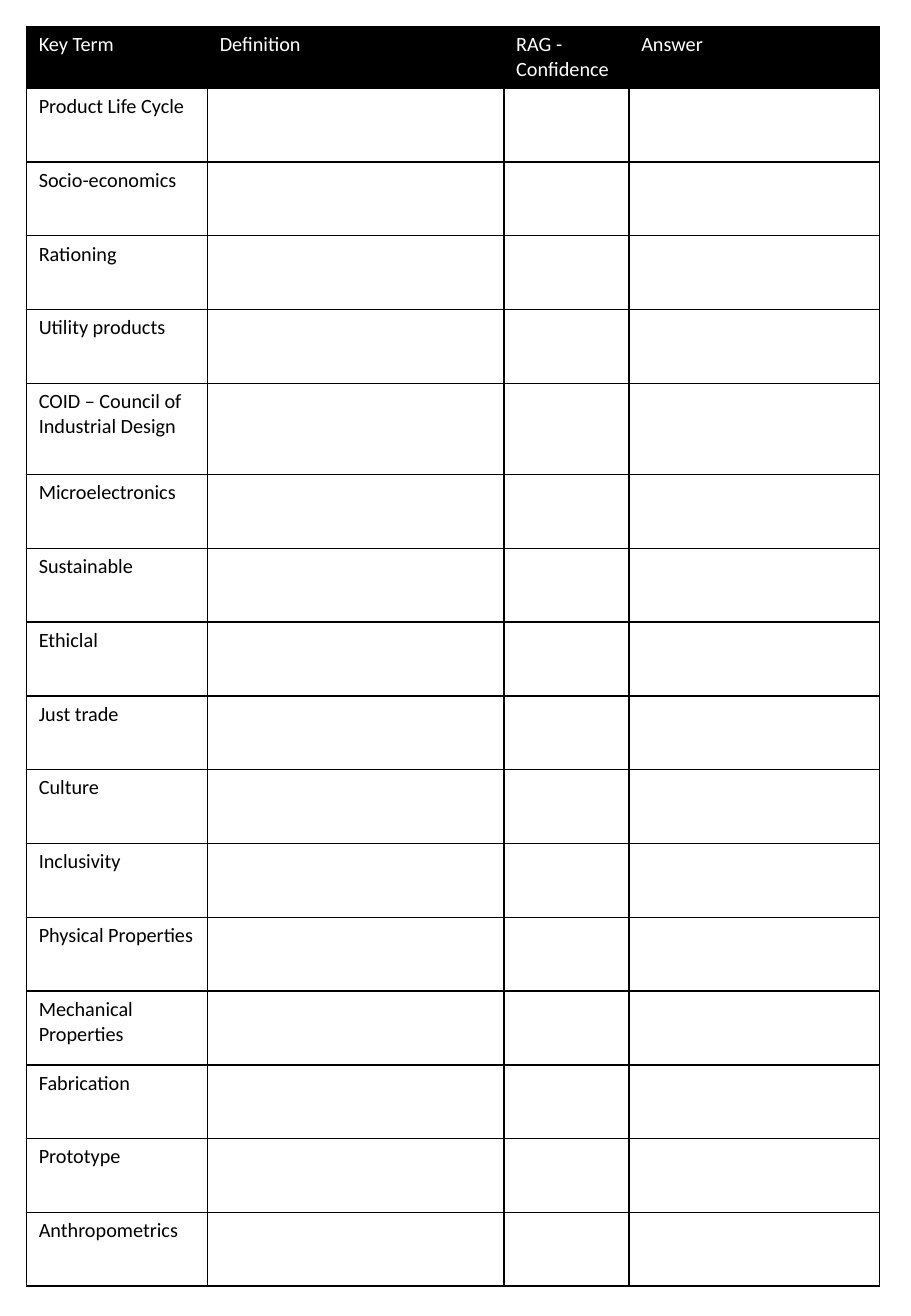
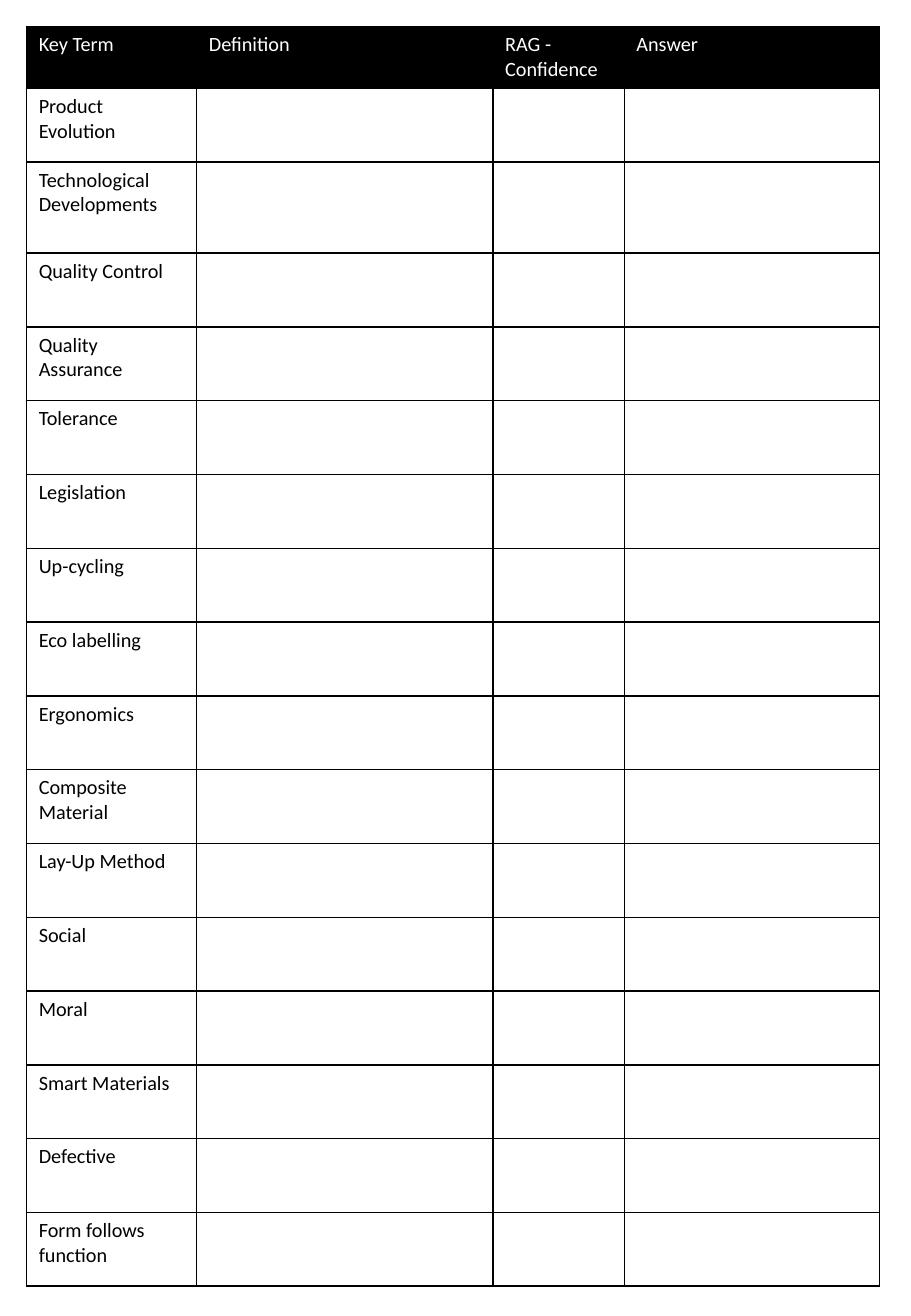
import dataclasses

import lxml.etree
import pptx
import pptx.dml.color
import pptx.oxml.ns
import pptx.util

Pt = pptx.util.Pt
qn = pptx.oxml.ns.qn


@dataclasses.dataclass(frozen=True)
class Theme:
    ink: str = "000000"
    paper: str = "FFFFFF"
    font: str = "Calibri"
    text_size: float = 12
    border: float = 1
    margin: float = 15.8
    header_height: float = 36.5
    row_height: float = 43.75
    tall_row_height: float = 54


HEADINGS = ["Key Term", "Definition", "RAG - Confidence", "Answer"]

SHEETS = [
    {
        "widths": [107.3, 175.7, 74.2, 148.3],
        "tall_term": "COID – Council of Industrial Design",
        "terms": [
            "Product Life Cycle", "Socio-economics", "Rationing", "Utility products",
            "COID – Council of Industrial Design", "Microelectronics", "Sustainable",
            "Ethiclal", "Just trade", "Culture", "Inclusivity", "Physical Properties",
            "Mechanical Properties", "Fabrication", "Prototype", "Anthropometrics",
        ],
    },
    {
        "widths": [100.8, 175.7, 77.8, 151.2],
        "tall_term": "Technological Developments",
        "terms": [
            "Product Evolution", "Technological Developments", "Quality Control",
            "Quality Assurance", "Tolerance", "Legislation", "Up-cycling",
            "Eco labelling", "Ergonomics", "Composite Material", "Lay-Up Method",
            "Social", "Moral", "Smart Materials", "Defective", "Form follows function",
        ],
    },
]


def rgb(value):
    return pptx.dml.color.RGBColor.from_string(value)


def write_text(frame, text, *, font, size, color):
    run = frame.paragraphs[0].add_run()
    run.text = text
    run.font.name = font
    run.font.size = Pt(size)
    run.font.color.rgb = rgb(color)


class Worksheet:
    def __init__(self, deck, theme):
        self.theme = theme
        self.slide = deck.slides.add_slide(deck.slide_layouts[6])

    def outline(self, cell):
        properties = cell._tc.get_or_add_tcPr()
        for position, side in enumerate(("a:lnL", "a:lnR", "a:lnT", "a:lnB")):
            edge = lxml.etree.Element(qn(side), w=str(Pt(self.theme.border)))
            fill = lxml.etree.SubElement(edge, qn("a:solidFill"))
            lxml.etree.SubElement(fill, qn("a:srgbClr"), val=self.theme.ink)
            properties.insert(position, edge)

    def cell(self, cell, text, is_heading):
        theme = self.theme
        if is_heading:
            cell.fill.solid()
            cell.fill.fore_color.rgb = rgb(theme.ink)
        else:
            cell.fill.background()
        self.outline(cell)
        if text:
            write_text(cell.text_frame, text, font=theme.font, size=theme.text_size,
                       color=theme.paper if is_heading else theme.ink)

    def glossary(self, terms, widths, tall_term):
        theme = self.theme
        heights = [theme.header_height] + [
            theme.tall_row_height if term == tall_term else theme.row_height
            for term in terms
        ]
        glossary = self.slide.shapes.add_table(
            len(heights), len(widths), Pt(theme.margin), Pt(theme.margin),
            Pt(sum(widths)), Pt(sum(heights))).table
        glossary.first_row = False
        glossary.horz_banding = False
        for column, width in zip(glossary.columns, widths):
            column.width = Pt(width)
        blanks = [""] * (len(HEADINGS) - 1)
        entries = [HEADINGS] + [[term, *blanks] for term in terms]
        for index, (row, height, entry) in enumerate(zip(glossary.rows, heights, entries)):
            row.height = Pt(height)
            for cell, text in zip(row.cells, entry):
                self.cell(cell, text, index == 0)


def main():
    deck = pptx.Presentation()
    deck.slide_width, deck.slide_height = Pt(540), Pt(780)
    theme = Theme()
    for sheet in SHEETS:
        Worksheet(deck, theme).glossary(**sheet)
    deck.save("out.pptx")


if __name__ == "__main__":
    main()
